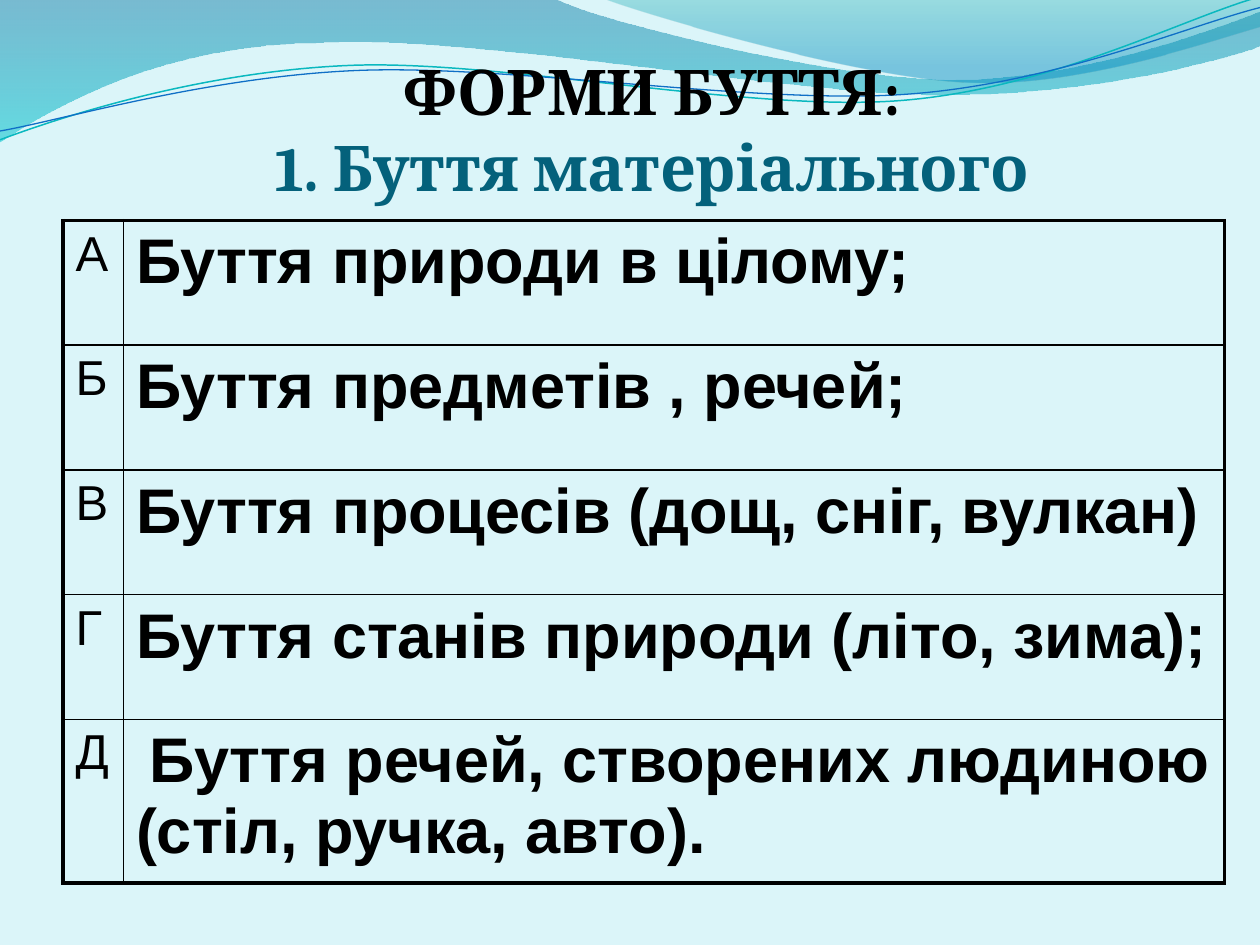
from lxml import etree
from pptx import Presentation
from pptx import util as u
from pptx.dml.color import RGBColor
from pptx.enum import text
from pptx.oxml import ns

BLACK = RGBColor(0x00, 0x00, 0x00)
PALE = RGBColor(0xDB, 0xF5, 0xF9)
TEAL = RGBColor(0x04, 0x61, 0x7B)
WAVE_BLUE = RGBColor(0x00, 0x74, 0xA1)
WAVE_CYAN = RGBColor(0x00, 0xC6, 0xCF)
WAVE_GREEN = RGBColor(0x00, 0xA1, 0xA9)
WAVE_SKY = RGBColor(0x00, 0x8B, 0xBF)
LINE_CYAN = RGBColor(0x0A, 0xB8, 0xBF)
LINE_BLUE = RGBColor(0x0F, 0x6F, 0xC6)

THIN, THICK = 1, 2.25

# An outline is a start point, then straight ends (x, y) or Bezier segments
# (x1, y1, x2, y2, x, y), in inches.
LEFT_WAVE = [
    (0, -0.01), (4.4, -0.01), (4.76, 0.17, 6.64, 0.63, 7.58, 0.63),
    (8.53, 0.63, 9.58, 0.26, 10, 0.09), (10.01, 0.36),
    (9.83, 0.44, 8.7, 0.76, 7.46, 0.75), (6.22, 0.75, 3.82, 0.28, 2.57, 0.34),
    (1.29, 0.35, 0.46, 0.83, -0.01, 1.13), (0, -0.01)]
RIGHT_WAVE = [
    (4.79, -0.01), (5.09, 0.11, 6.82, 0.62, 7.69, 0.65),
    (8.56, 0.69, 9.61, 0.32, 10, 0.21), (10, 0), (4.79, -0.01)]
CYAN_CURVE = [
    (0, 1.11), (0.48, 0.93, 1.58, 0.57, 2.77, 0.52),
    (3.95, 0.47, 5.93, 0.89, 7.13, 0.8), (8.33, 0.71, 9.38, 0.15, 9.98, -0.02)]
BLUE_CURVE = [
    (0, 1.04), (0.47, 0.96, 1.64, 0.61, 2.83, 0.56),
    (4.03, 0.51, 5.97, 0.83, 7.17, 0.75), (8.36, 0.67, 9.41, 0.21, 10, 0.06)]

FORMS = [
    ("А", "Буття природи в цілому;"),
    ("Б", "Буття предметів , речей;"),
    ("В", "Буття процесів (дощ, сніг, вулкан)"),
    ("Г", "Буття станів природи (літо, зима);"),
    ("Д", " Буття речей, створених людиною (стіл, ручка, авто)."),
]


def bend(shape, outline):
    """Turn the straight segments that have control points into Bezier curves."""
    lines = list(shape.element.spPr.iter(ns.qn("a:lnTo")))
    for line, segment in zip(lines, outline[1:]):
        if len(segment) == 2:
            continue
        line.tag = ns.qn("a:cubicBezTo")
        for point in list(line):
            line.remove(point)
        for x, y in zip(segment[::2], segment[1::2]):
            etree.SubElement(line, ns.qn("a:pt"),
                             x=str(u.Inches(x) - shape.left),
                             y=str(u.Inches(y) - shape.top))


def add_outline(page, outline, close):
    ends = [(u.Inches(segment[-2]), u.Inches(segment[-1])) for segment in outline]
    builder = page.shapes.build_freeform(*ends[0])
    builder.add_line_segments(ends[1:], close=close)
    shape = builder.convert_to_shape()
    shape.shadow.inherit = False
    bend(shape, outline)
    return shape


def add_wave(page, outline, stops):
    """Fill a closed outline from top to bottom; stops are (position, colour, alpha %)."""
    wave = add_outline(page, outline, True)
    wave.line.fill.background()
    wave.fill.gradient()
    wave.fill.gradient_angle = 270
    for stop, (position, colour, _) in zip(wave.fill.gradient_stops, stops):
        stop.position = position
        stop.color.rgb = colour
    colours = wave.element.spPr.iter(ns.qn("a:srgbClr"))
    for colour, (_, _, alpha) in zip(colours, stops):
        etree.SubElement(colour, ns.qn("a:alpha"), val=str(alpha * 1000))


def add_curve(page, outline, colour, width):
    curve = add_outline(page, outline, False)
    curve.fill.background()
    curve.line.color.rgb = colour
    curve.line.width = u.Pt(width)


def add_waves(page):
    add_wave(page, LEFT_WAVE, [(0, WAVE_BLUE, 45), (1, WAVE_CYAN, 55)])
    add_wave(page, RIGHT_WAVE, [(0, WAVE_GREEN, 30), (0.8, WAVE_SKY, 45)])
    add_curve(page, CYAN_CURVE, LINE_CYAN, 0.85)
    add_curve(page, BLUE_CURVE, LINE_BLUE, 0.75)


def style(span, font, size, colour, bold):
    span.font.name = font
    span.font.size = u.Pt(size)
    span.font.color.rgb = colour
    span.font.bold = bold


def add_title(page, left, top, width, height):
    frame = page.shapes.add_textbox(left, top, width, height).text_frame
    frame.word_wrap = True
    frame.vertical_anchor = text.MSO_ANCHOR.BOTTOM
    frame.margin_left = frame.margin_right = frame.margin_bottom = 0
    para = frame.paragraphs[0]
    para.text = "ФОРМИ БУТТЯ:\v1. Буття матеріального"
    para.alignment = text.PP_ALIGN.CENTER
    for span, colour in zip(para.runs, (BLACK, TEAL)):
        style(span, "Cambria", 36, colour, True)


def set_borders(cell, widths):
    """Draw black borders; widths are points for left, right, top and bottom."""
    properties = cell._tc.get_or_add_tcPr()
    for index, (side, width) in enumerate(zip("LRTB", widths)):
        line = etree.Element(ns.qn(f"a:ln{side}"), w=str(u.Pt(width)))
        fill = etree.SubElement(line, ns.qn("a:solidFill"))
        etree.SubElement(fill, ns.qn("a:srgbClr"), val=str(BLACK))
        properties.insert(index, line)


def add_forms_table(page, left, top, width, height):
    last = len(FORMS) - 1
    table = page.shapes.add_table(len(FORMS), 2, left, top, width, height).table
    table.first_row = table.horz_banding = False
    table.columns[0].width = u.Inches(0.48)
    table.columns[1].width = width - u.Inches(0.48)
    for index, form in enumerate(FORMS):
        table.rows[index].height = u.Inches(1.3 if index == last else 0.99)
        for column, (words, size) in enumerate(zip(form, (28, 36))):
            cell = table.cell(index, column)
            cell.fill.background()
            set_borders(cell, (
                THIN if column else THICK, THICK if column else THIN,
                THIN if index else THICK, THICK if index == last else THIN))
            para = cell.text_frame.paragraphs[0]
            if words.startswith(" "):
                indent = para.add_run()
                indent.text = " "
                style(indent, "Arial", 28, BLACK, False)
            span = para.add_run()
            span.text = words.strip()
            style(span, "Arial", size, BLACK, column == 1)


def main():
    deck = Presentation()
    deck.slide_width, deck.slide_height = u.Inches(10), u.Inches(7.5)
    page = deck.slides.add_slide(deck.slide_layouts[6])
    page.background.fill.solid()
    page.background.fill.fore_color.rgb = PALE
    add_waves(page)
    add_title(page, u.Inches(0.83), u.Inches(0.28), u.Inches(8.69), u.Inches(1.34))
    add_forms_table(page, u.Inches(0.5), u.Inches(1.75), u.Inches(9.22), u.Inches(5.26))
    deck.save("out.pptx")


if __name__ == "__main__":
    main()
